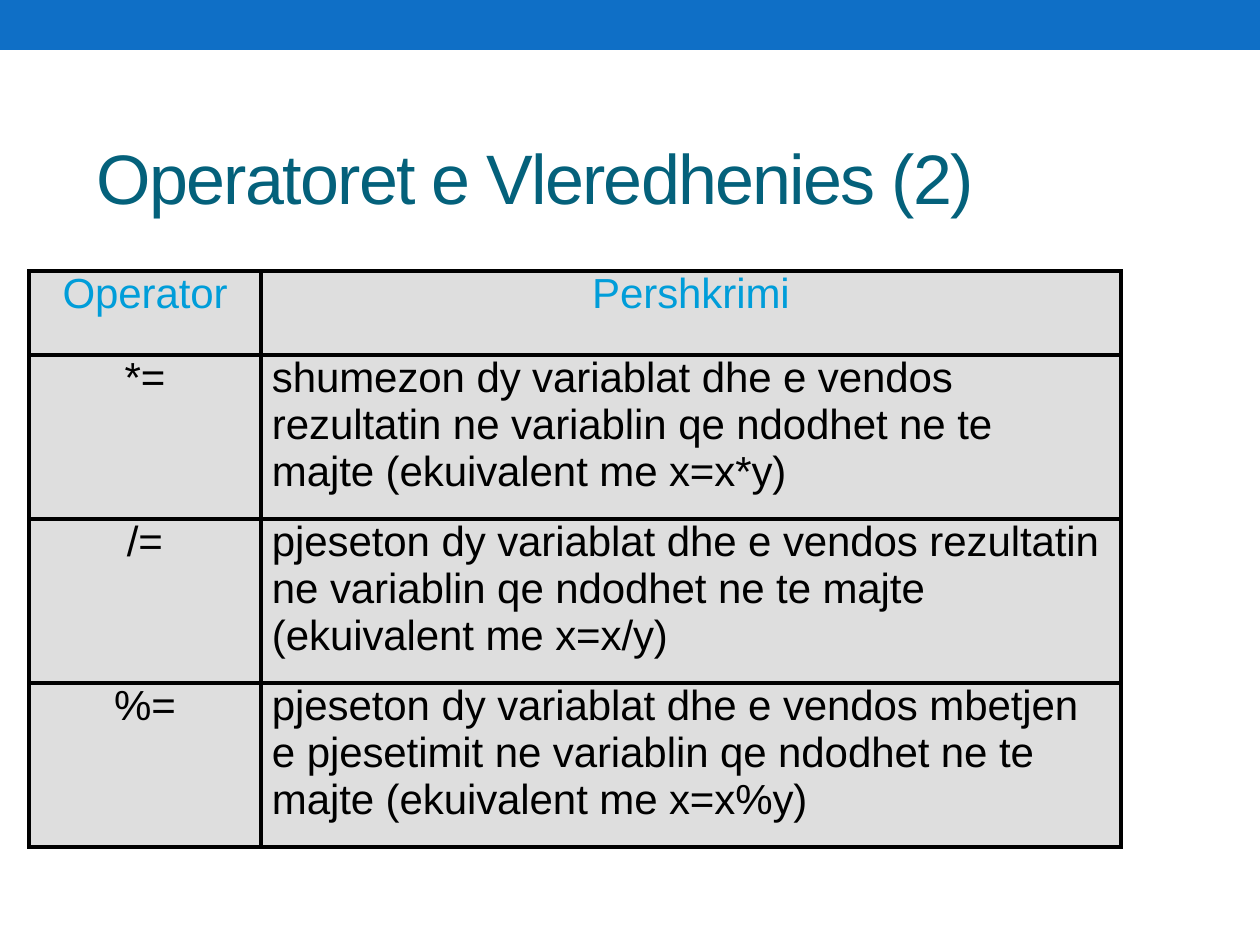
from lxml.etree import SubElement
from pptx import Presentation
from pptx.dml.color import RGBColor
from pptx.enum.shapes import MSO_SHAPE
from pptx.enum.text import MSO_ANCHOR, PP_ALIGN
from pptx.oxml.ns import qn
from pptx.util import Pt

PX = 7257  # EMU per px, 126 px to the inch
FONT = "Arial"
COLORS = {
    "bar": "0F6FC6",
    "title": "04617B",
    "header": "009DD9",
    "body": "000000",
    "cell": "DEDEDE",
    "border": "000000",
}
HEADINGS = ("Operator", "Pershkrimi")
OPERATORS = [
    ("*=", "shumezon dy variablat dhe e vendos rezultatin ne variablin qe "
           "ndodhet ne te majte (ekuivalent me x=x*y)"),
    ("/=", "pjeseton dy variablat dhe e vendos rezultatin ne variablin qe "
           "ndodhet ne te majte (ekuivalent me x=x/y)"),
    ("%=", "pjeseton dy variablat dhe e vendos mbetjen e pjesetimit ne "
           "variablin qe ndodhet ne te majte (ekuivalent me x=x%y)"),
]
COLUMN_WIDTHS = (232, 860)
HEADER_HEIGHT, ROW_HEIGHT = 84, 164


def px(length):
    return length * PX


def rgb(name):
    return RGBColor.from_string(COLORS[name])


def write(frame, text, size, color, align=PP_ALIGN.LEFT, spacing=0):
    """Fill a text frame with one paragraph; spacing is in 1/100 pt."""
    paragraph = frame.paragraphs[0]
    paragraph.text = text
    paragraph.alignment = align
    for run in paragraph.runs:
        run.font.name = FONT
        run.font.size = Pt(size)
        run.font.color.rgb = rgb(color)
        run.font._element.set("spc", str(spacing))


def add_bar(slide):
    bar = slide.shapes.add_shape(MSO_SHAPE.RECTANGLE, 0, 0, px(1260), px(50))
    bar.shadow.inherit = False
    bar.fill.solid()
    bar.fill.fore_color.rgb = rgb("bar")
    bar.line.fill.background()


def add_title(slide, text):
    title = slide.shapes.add_textbox(px(74), px(77), px(1113), px(142))
    frame = title.text_frame
    frame.word_wrap = True
    frame.vertical_anchor = MSO_ANCHOR.BOTTOM
    frame.margin_left = px(23)
    frame.margin_top = frame.margin_right = frame.margin_bottom = 0
    write(frame, text, 40, "title", spacing=-100)


def add_borders(cell):
    properties = cell._tc.get_or_add_tcPr()
    for position, side in enumerate(("a:lnL", "a:lnR", "a:lnT", "a:lnB")):
        line = SubElement(properties, qn(side), w=str(Pt(2.25)))
        fill = SubElement(line, qn("a:solidFill"))
        SubElement(fill, qn("a:srgbClr"), val=COLORS["border"])
        properties.insert(position, line)


def format_cell(cell, text, color, align, left=0, right=0):
    cell.margin_left, cell.margin_right = px(left), px(right)
    cell.margin_top = cell.margin_bottom = 0
    cell.vertical_anchor = MSO_ANCHOR.TOP
    cell.fill.solid()
    cell.fill.fore_color.rgb = rgb("cell")
    add_borders(cell)
    write(cell.text_frame, text, 24, color, align, spacing=-5)


def add_operator_table(slide):
    heights = [HEADER_HEIGHT] + [ROW_HEIGHT] * len(OPERATORS)
    table = slide.shapes.add_table(
        len(heights), len(COLUMN_WIDTHS), px(29), px(271),
        px(sum(COLUMN_WIDTHS)), px(sum(heights))).table
    for column, width in zip(table.columns, COLUMN_WIDTHS):
        column.width = px(width)
    for row, height in zip(table.rows, heights):
        row.height = px(height)
    for column, heading in enumerate(HEADINGS):
        format_cell(table.cell(0, column), heading, "header", PP_ALIGN.CENTER)
    for row, (operator, description) in enumerate(OPERATORS, start=1):
        format_cell(table.cell(row, 0), operator, "body", PP_ALIGN.CENTER)
        format_cell(table.cell(row, 1), description, "body", PP_ALIGN.LEFT,
                    left=11, right=16)


def main():
    presentation = Presentation()
    presentation.slide_width, presentation.slide_height = px(1260), px(945)
    slide = presentation.slides.add_slide(presentation.slide_layouts[6])
    add_bar(slide)
    add_title(slide, "Operatoret e Vleredhenies (2)")
    add_operator_table(slide)
    presentation.save("out.pptx")


if __name__ == "__main__":
    main()
